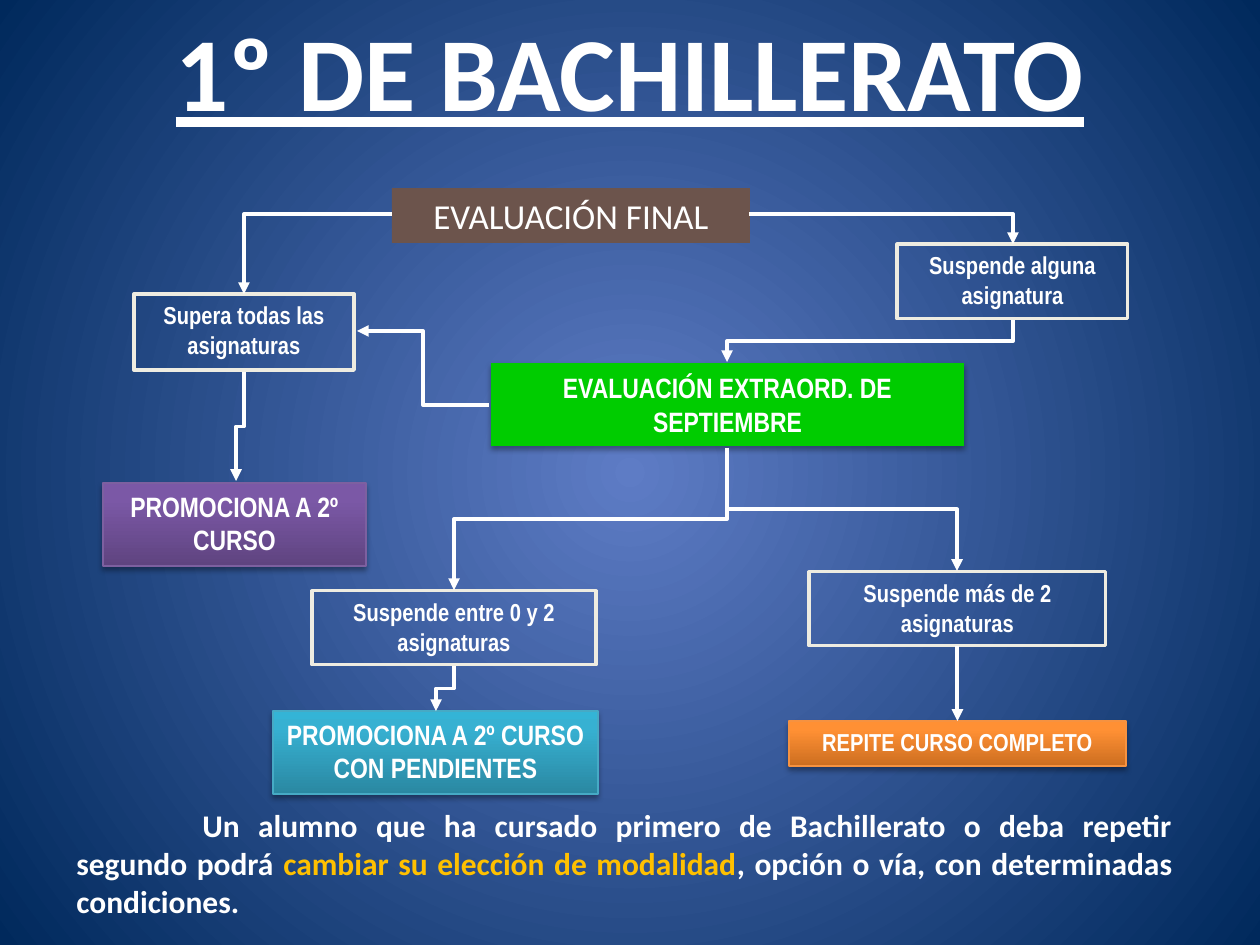
from dataclasses import dataclass
from typing import Optional

from pptx import Presentation
from pptx.dml.color import RGBColor
from pptx.enum.shapes import MSO_CONNECTOR as Conn, MSO_SHAPE as Geom
from pptx.enum.text import MSO_ANCHOR as Anchor, MSO_AUTO_SIZE as Auto, PP_ALIGN as Align
from pptx.oxml import parse_xml
from pptx.oxml.ns import nsdecls, qn
from pptx.util import Pt

SCALE = 914400 / 126
WHITE, CREAM, GOLD = "FFFFFF", "EEECE1", "FFC000"
SMALL = {"name": "Arial Narrow", "size": Pt(14), "bold": True}
LARGE = SMALL | {"size": Pt(16)}
HEAD = {"name": "Calibri", "size": Pt(60), "bold": True, "underline": True}
BODY = {"name": "Calibri", "size": Pt(18), "bold": True}
FINAL = {"name": "Calibri", "size": Pt(20), "bold": False}
DOWN = '<a:lin ang="16200000" scaled="0"/>'
ROUND = '<a:path path="circle"><a:fillToRect l="50000" t="50000" r="50000" b="50000"/></a:path>'
SHADE = ('<a:outerShdw blurRad="39370" dist="22860" dir="5400000" rotWithShape="0">'
         '<a:srgbClr val="000000"><a:alpha val="35000"/></a:srgbClr></a:outerShdw>')


@dataclass
class Box:
    text: str
    area: tuple[int, int, int, int]
    font: dict
    fill: tuple[str, ...] = ()
    line: Optional[str] = None
    width: float = 1.75
    shade: bool = False
    anchor: Anchor = Anchor.TOP


@dataclass
class Elbow:
    start: tuple[int, int]
    end: tuple[int, int]
    kind: str


BOXES = {
    "final": Box("EVALUACIÓN FINAL", (392, 188, 358, 55), FINAL, ("6C544C",), anchor=Anchor.MIDDLE),
    "pass": Box("Supera todas las asignaturas", (134, 294, 220, 76), SMALL, line=CREAM, width=2.25),
    "fail": Box("Suspende alguna asignatura", (897, 244, 231, 75), SMALL, line=CREAM),
    "extra": Box("EVALUACIÓN EXTRAORD. DE SEPTIEMBRE", (491, 363, 473, 83), LARGE, ("00CC00",),
                 shade=True, anchor=Anchor.MIDDLE),
    "few": Box("Suspende entre 0 y 2 asignaturas", (312, 591, 284, 74), SMALL, line=CREAM),
    "next": Box("PROMOCIONA A 2º CURSO", (103, 483, 263, 83), LARGE,
                ("5F4480", "7B58A6", "7C57A8"), "7D60A0", 0.75, True),
    "pending": Box("PROMOCIONA A 2º CURSO CON PENDIENTES", (273, 711, 325, 83), LARGE,
                   ("2A88A2", "37B1D2", "34B4D6"), "46AAC5", 0.75, True),
    "many": Box("Suspende más de 2 asignaturas", (809, 572, 297, 74), SMALL, line=CREAM),
    "repeat": Box("REPITE CURSO COMPLETO", (789, 721, 337, 45), SMALL,
                  ("CC6E20", "FF9034", "FF9136"), "F69240", 0.75, True),
}
ELBOWS = [
    Elbow((392, 214), (244, 294), "corner"),
    Elbow((749, 214), (1013, 244), "corner"),
    Elbow((1013, 320), (727, 362), "drop"),
    Elbow((727, 448), (454, 590), "drop"),
    Elbow((727, 448), (957, 571), "drop"),
    Elbow((454, 666), (436, 711), "drop"),
    Elbow((244, 372), (236, 481), "drop"),
    Elbow((489, 405), (357, 331), "side"),
]
NOTE = [
    ("Un alumno que ha cursado primero de Bachillerato o deba repetir segundo podrá ", WHITE),
    ("cambiar su elección de modalidad", GOLD),
    (", opción o vía, con determinadas condiciones.", WHITE),
]


def emu(*px: float) -> list[int]:
    return [round(v * SCALE) for v in px]


def color(code: str) -> RGBColor:
    return RGBColor.from_string(code)


def node(xml: str):
    return parse_xml(xml.replace(" ", f" {nsdecls('a')} ", 1))


def blend(root, stops: list[tuple[int, str]], form: str) -> None:
    grad = root.find(".//" + qn("a:gradFill"))
    for kid in list(grad):
        grad.remove(kid)
    items = "".join(f'<a:gs pos="{pos * 1000}"><a:srgbClr val="{code}"/></a:gs>' for pos, code in stops)
    grad.append(parse_xml(f"<a:gsLst {nsdecls('a')}>{items}</a:gsLst>"))
    grad.append(node(form))


def write(par, text: str, font: dict, code: str = WHITE) -> None:
    run = par.add_run()
    run.text = text
    for key, val in font.items():
        setattr(run.font, key, val)
    run.font.color.rgb = color(code)


def setup(frame, anchor: Anchor, align: Align):
    form = {"word_wrap": True, "auto_size": Auto.SHAPE_TO_FIT_TEXT, "vertical_anchor": anchor}
    for key, val in form.items():
        setattr(frame, key, val)
    par = frame.paragraphs[0]
    par.alignment = align
    return par


def draw_box(slide, box: Box):
    shape = slide.shapes.add_shape(Geom.RECTANGLE, *emu(*box.area))
    shape.shadow.inherit = False
    if len(box.fill) > 1:
        shape.fill.gradient()
        blend(shape.element, list(zip((0, 80, 100), box.fill)), DOWN)
    elif box.fill:
        shape.fill.solid()
        shape.fill.fore_color.rgb = color(box.fill[0])
    else:
        shape.fill.background()
    if box.line:
        shape.line.color.rgb = color(box.line)
        shape.line.width = Pt(box.width)
    else:
        shape.line.fill.background()
    if box.shade:
        shape.element.spPr.find(qn("a:effectLst")).append(node(SHADE))
    write(setup(shape.text_frame, box.anchor, Align.CENTER), box.text, box.font)
    return shape


def style(link) -> None:
    link.line.color.rgb = color(WHITE)
    link.line.width = Pt(2.25)
    link.line._get_or_add_ln().append(node('<a:tailEnd type="triangle"/>'))
    link.element.spPr.append(node("<a:effectLst />"))


def draw_elbow(slide, bend: Elbow) -> None:
    (x1, y1), (x2, y2) = bend.start, bend.end
    ends = x1, y1, x2, y2
    if bend.kind == "drop":
        mid_x, mid_y = (x1 + x2) / 2, (y1 + y2) / 2
        half_w, half_h = (y2 - y1) / 2, (x2 - x1) / 2
        ends = mid_x - half_w, mid_y + half_h, mid_x + half_w, mid_y - half_h
    link = slide.shapes.add_connector(Conn.ELBOW, *emu(*ends))
    props = link.element.spPr
    if bend.kind == "drop":
        props.find(qn("a:xfrm")).set("rot", "5400000")
    elif bend.kind == "corner":
        props.find(qn("a:prstGeom")).set("prst", "bentConnector2")
    style(link)


def main() -> None:
    deck = Presentation()
    deck.slide_width, deck.slide_height = emu(1260, 945)
    slide = deck.slides.add_slide(deck.slide_layouts[5])
    slide.background.fill.gradient()
    blend(slide.element, [(0, "5E7CC5"), (100, "00295C")], ROUND)

    title = slide.shapes.title
    title.left, title.top, title.width, title.height = emu(0, 0, 1260, 140)
    write(setup(title.text_frame, Anchor.TOP, Align.CENTER), "1º DE BACHILLERATO", HEAD)

    shapes = {name: draw_box(slide, box) for name, box in BOXES.items()}
    for bend in ELBOWS:
        draw_elbow(slide, bend)
    link = slide.shapes.add_connector(Conn.STRAIGHT, 0, 0, 0, 0)
    link.begin_connect(shapes["many"], 2)
    link.end_connect(shapes["repeat"], 0)
    style(link)

    note = slide.shapes.add_textbox(*emu(64, 800, 1121, 127))
    par = setup(note.text_frame, Anchor.TOP, Align.JUSTIFY)
    par._p.get_or_add_pPr().set("indent", str(emu(126)[0]))
    for text, code in NOTE:
        write(par, text, BODY, code)
    deck.save("out.pptx")


if __name__ == "__main__":
    main()
